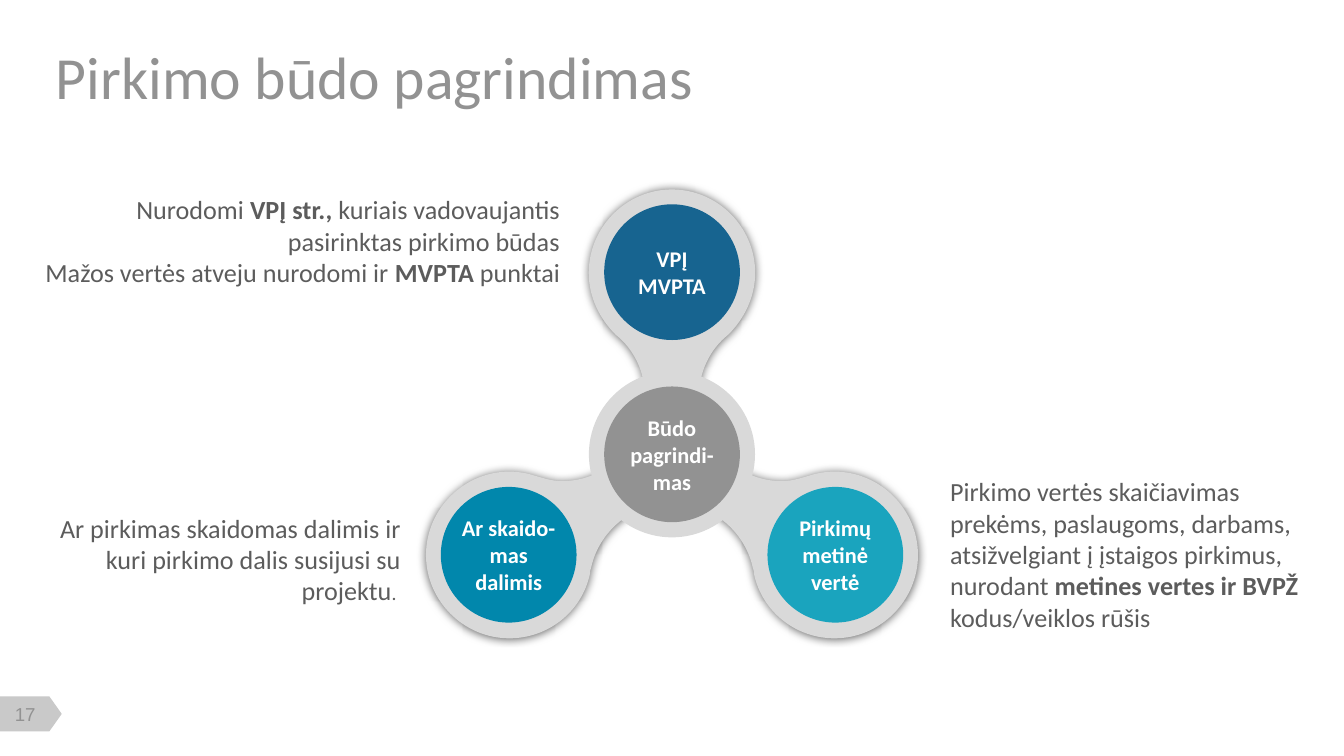
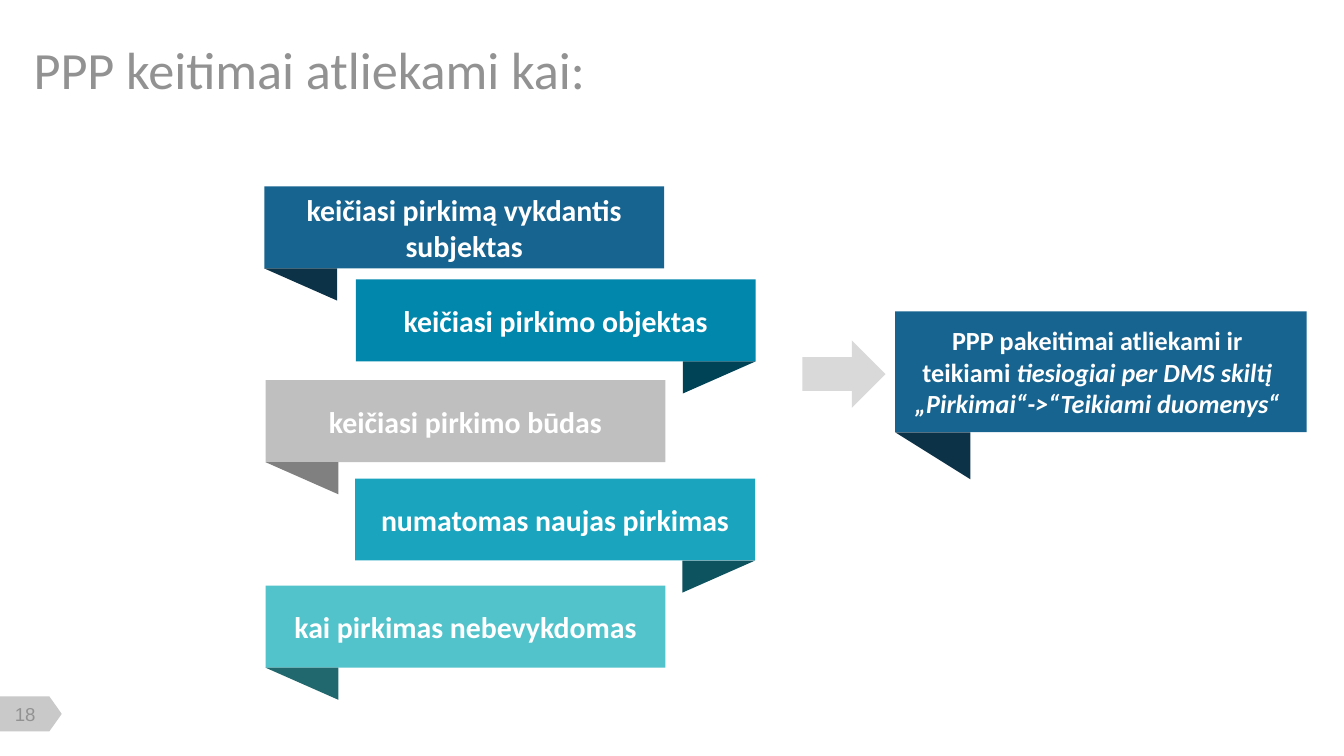
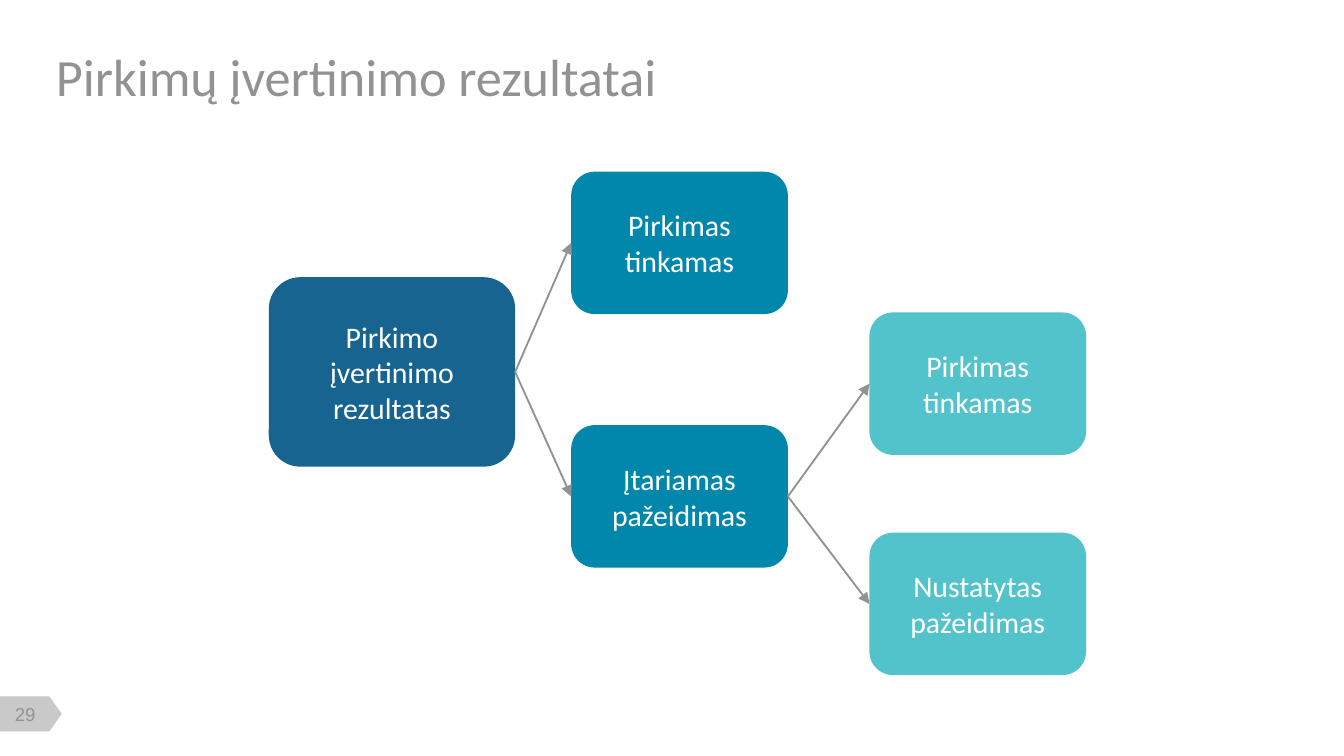
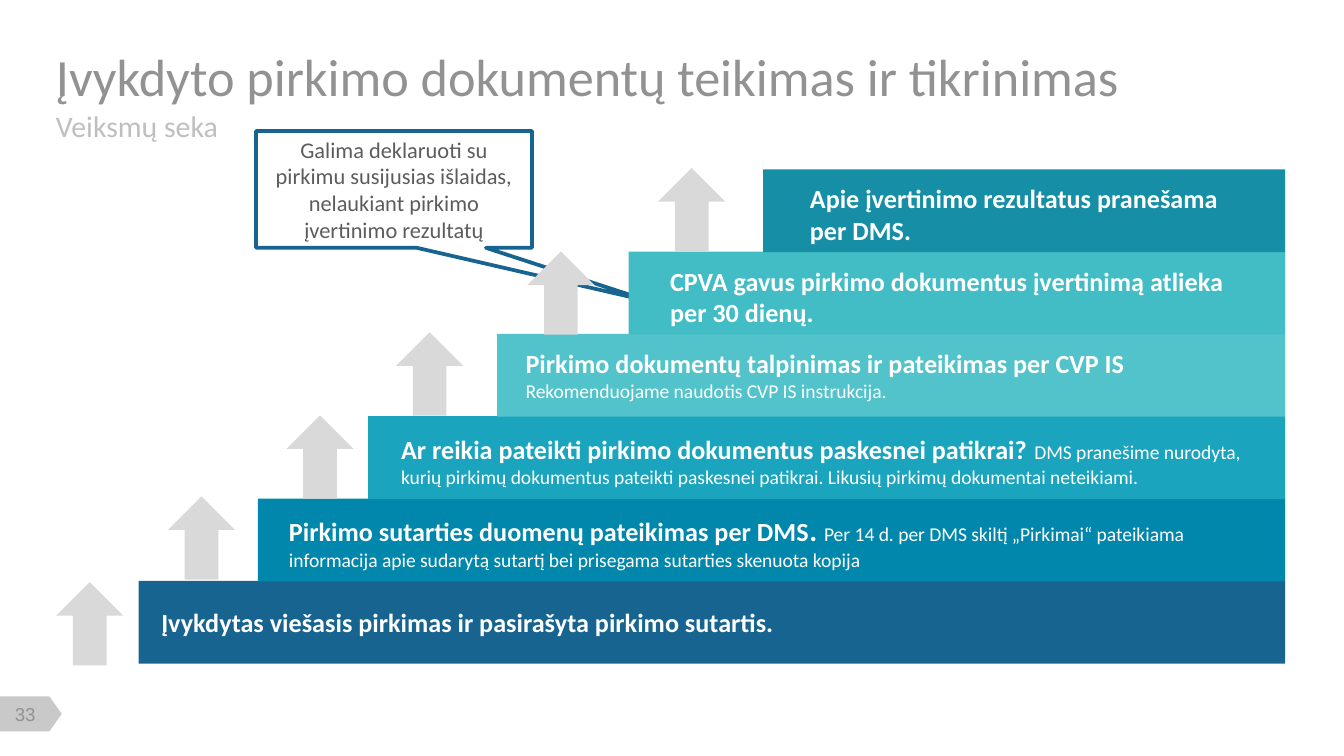
import pptx
import pptx.dml.color
import pptx.enum.shapes
import pptx.enum.text
import pptx.oxml.ns
import pptx.util

Pt = pptx.util.Pt
qn = pptx.oxml.ns.qn
SHAPE = pptx.enum.shapes.MSO_SHAPE
ALIGN = pptx.enum.text.PP_ALIGN
ANCHOR = pptx.enum.text.MSO_ANCHOR

COLORS = {
    "white": "FFFFFF", "text": "5C5C5C", "title": "929292", "subtitle": "BFBFBF",
    "tag": "C9C9C9", "light": "D9D9D9", "navy": "176490", "navy_dark": "0C3248",
    "blue": "0187AC", "blue_dark": "004356", "silver": "BFBFBF", "silver_dark": "808080",
    "teal": "1AA4BE", "teal_dark": "0D525F", "aqua": "52C3CB", "aqua_dark": "21686E",
    "mint": "42BDC6", "sea": "168EA6", "shadow": "000000",
}
BOLD = {"bold": True}
SMALL = {"size": Pt(10.5), "bold": False}
GAP = {"size": Pt(16)}
NO_INSETS, INSETS = (0, 0, 0, 0), (7.2, 3.6, 7.2, 3.6)
TITLE_BOX = (30, 26.6, 658.8, 28.1)

# Slide 17: a spinner of three discs round a hub
SPINNER_AXIS = 360
SPINNER_START = (0, 101.5)
# Bezier segments of one half: distance from the axis, height
SPINNER_HALF = [
    ((24.5, 101.5), (44.6, 121.7), (44.6, 146.2)),
    ((44.6, 159.1), (38.9, 170.6), (30.2, 179.3)),
    ((20.2, 187.2), (14.4, 199.4), (14.4, 213.1)),
    ((14.4, 237.6), (34.6, 257.8), (59, 257.8)),
    ((64.1, 257.8), (68.4, 256.3), (73.4, 254.9)),
    ((77.8, 253.4), (82.8, 252.7), (87.1, 252.7)),
    ((111.6, 252.7), (131.8, 272.9), (131.8, 297.4)),
    ((131.8, 321.8), (111.6, 342), (87.1, 342)),
    ((66.2, 342), (48.2, 327.6), (43.9, 307.4)),
    ((43.9, 306.7), (43.9, 305.3), (43.2, 303.8)),
    ((38.9, 284.4), (20.9, 269.3), (0, 269.3)),
]
DISC, HUB = 72.7, 89
HUB_CENTRE = (360, 243.4)
DISCS = [
    ((272.5, 297.2), "blue", ["Ar skaido-mas dalimis"]),
    ((447.5, 297.2), "teal", ["Pirkimų metinė vertė"]),
    ((360, 145.8), "navy", ["VPĮ", "MVPTA"]),
]
HUB_TEXT = ["Būdo pagrindi-mas"]
SPINNER_NOTES = [
    ((17.8, 103.7, 282.2, 67.7), ALIGN.RIGHT, [
        ["Nurodomi ", ("VPĮ str., ", BOLD), "kuriais vadovaujantis pasirinktas pirkimo būdas"],
        ["Mažos vertės atveju nurodomi ir ", ("MVPTA ", BOLD), "punktai"]]),
    ((18.2, 274.3, 196.6, 51.1), ALIGN.RIGHT, [
        ["Ar pirkimas skaidomas dalimis ir kuri pirkimo dalis susijusi su projektu",
         (". ", {"size": Pt(10.5)})]]),
    ((509, 254.8, 196.6, 85), ALIGN.LEFT, [
        ["Pirkimo vertės skaičiavimas prekėms, paslaugoms, darbams, atsižvelgiant "
         "į įstaigos pirkimus, nurodant ", ("metines vertes ir BVPŽ", BOLD),
         " kodus/veiklos rūšis"]]),
]

# Slide 18: ribbons folded left and right in turn
RIBBON_SIZE, RIBBON_FOLD = (214.2, 43.9), (39, 17.2)
RIBBONS = [
    (141.6, 99.9, "navy", "keičiasi pirkimą vykdantis subjektas"),
    (190.6, 149.7, "blue", "keičiasi pirkimo objektas"),
    (142.3, 203.7, "silver", "keičiasi pirkimo būdas"),
    (190.3, 256.4, "teal", "numatomas naujas pirkimas"),
    (142.3, 313.8, "aqua", "kai pirkimas nebevykdomas"),
]
OUTCOME_BOX, OUTCOME_FOLD = (479.6, 166.8, 220.4, 64.8), (40.3, 25.2)
OUTCOME_INSETS = (7.8, 3.6, 11.6, 3.6)
OUTCOME = [["PPP pakeitimai atliekami ir teikiami ",
            ("tiesiogiai per DMS skiltį „Pirkimai“->“Teikiami duomenys“", {"italic": True})]]

# Slide 29: decision tree
NODE_SIZE = (116.1, 76.3)
NODES = {
    "result": ((144, 148.5, 132, 101.5), "navy", "Pirkimo įvertinimo rezultatas"),
    "fit": ((306, 92, *NODE_SIZE), "blue", "Pirkimas tinkamas"),
    "suspected": ((306, 227.8, *NODE_SIZE), "blue", "Įtariamas pažeidimas"),
    "cleared": ((465.8, 167.4, *NODE_SIZE), "aqua", "Pirkimas tinkamas"),
    "confirmed": ((465.8, 285.4, *NODE_SIZE), "aqua", "Nustatytas pažeidimas"),
}
BRANCHES = [("result", "fit"), ("result", "suspected"),
            ("suspected", "cleared"), ("suspected", "confirmed")]

# Slide 33: staircase, from the bottom step up
STAIR_RIGHT, STAIR_BOTTOM, RISE, STEP_HEIGHT = 688.5, 311.2, 44.1, 44.4
ARROW_SIZE = (44.6, 36)
# step left, colour, arrow corner, text box, text
STEPS = [
    (74.3, "navy", (25.8, 316.1), (79.3, 321.1, 581.8, 24.5),
     ["Įvykdytas viešasis pirkimas ir pasirašyta pirkimo sutartis."]),
    (138.1, "blue", (85.7, 270.2), (147.7, 270.7, 510.5, 39.6),
     [["Pirkimo sutarties duomenų pateikimas per DMS", (". ", GAP),
       ("Per 14 d. per DMS skiltį „Pirkimai“ pateikiama informacija apie sudarytą "
        "sutartį bei prisegama sutarties skenuota kopija", SMALL)]]),
    (197.2, "teal", (149.2, 226.8), (207.8, 226.6, 478.1, 39.6),
     [["Ar reikia pateikti pirkimo dokumentus paskesnei patikrai?", (" ", GAP),
       ("DMS pranešime nurodyta, kurių pirkimų dokumentus pateikti paskesnei "
        "patikrai. Likusių pirkimų dokumentai neteikiami.", SMALL)]]),
    (266.3, "aqua", (207.9, 182.3), (274.5, 182.7, 401, 36.7),
     ["Pirkimo dokumentų talpinimas ir pateikimas per CVP IS",
      [("Rekomenduojame naudotis CVP IS instrukcija.", SMALL)]]),
    (336.8, "mint", (278.2, 139), (351.9, 138.4, 321.1, 54),
     ["CPVA gavus pirkimo dokumentus įvertinimą atlieka per 30 dienų."]),
    (408.8, "sea", (348.3, 94.3), (426.8, 94.3, 246.2, 54),
     ["Apie įvertinimo rezultatus pranešama per DMS."]),
]
CALLOUT = ["Galima deklaruoti su pirkimu susijusias išlaidas, "
           "nelaukiant pirkimo įvertinimo rezultatų"]


def rgb(name):
    return pptx.dml.color.RGBColor.from_string(COLORS[name])


def write(sp, paras, size, color="white", bold=False, align=ALIGN.CENTER,
          anchor=ANCHOR.MIDDLE, insets=INSETS, font="Calibri"):
    """Fill a shape; a paragraph is a string or a list of strings and (text, font) runs."""
    tf = sp.text_frame
    tf.word_wrap = True
    tf.auto_size = pptx.enum.text.MSO_AUTO_SIZE.NONE
    tf.vertical_anchor = anchor
    tf.margin_left, tf.margin_top, tf.margin_right, tf.margin_bottom = map(Pt, insets)
    for i, runs in enumerate(paras):
        p = tf.paragraphs[0] if i == 0 else tf.add_paragraph()
        p.alignment = align
        p.font.name, p.font.size, p.font.bold = font, Pt(size), bold
        p.font.color.rgb = rgb(color)
        for run in [runs] if isinstance(runs, str) else runs:
            text, style = (run, {}) if isinstance(run, str) else run
            r = p.add_run()
            r.text = text
            for key, value in style.items():
                setattr(r.font, key, value)


def place(sp, box):
    sp.left, sp.top, sp.width, sp.height = map(Pt, box)


def paint(sp, color):
    sp.shadow.inherit = False
    sp.fill.solid()
    sp.fill.fore_color.rgb = rgb(color)
    sp.line.fill.background()


def add_shape(s, kind, box, color, rotation=0):
    sp = s.shapes.add_shape(kind, *map(Pt, box))
    sp.rotation = rotation
    paint(sp, color)
    return sp


def add_text(s, box, paras, size, **style):
    write(s.shapes.add_textbox(*map(Pt, box)), paras, size, **style)


def add_disc(s, centre, diameter, color, paras=()):
    x, y = centre
    box = (x - diameter / 2, y - diameter / 2, diameter, diameter)
    sp = add_shape(s, SHAPE.OVAL, box, color)
    write(sp, paras, 12, bold=True, insets=NO_INSETS)


def add_slide(prs, number, title, size=28, box=TITLE_BOX, layout=5):
    s = prs.slides.add_slide(prs.slide_layouts[layout])
    place(s.shapes.title, box)
    write(s.shapes.title, [title], size, "title", align=ALIGN.LEFT, insets=(0, 3.6, 7.2, 3.6))
    add_shape(s, SHAPE.FLOWCHART_OFFPAGE_CONNECTOR, (7.2, 365.9, 18.7, 33.1), "tag", 270)
    add_text(s, (1.6, 376.6, 23.8, 12.2), [str(number)], 10, color="title",
             insets=NO_INSETS, font="Arial")
    return s


def add_child(parent, tag, **attributes):
    child = parent.makeelement(qn(tag), attributes)
    parent.append(child)
    return child


def add_spinner(s):
    # The second half runs back up the mirrored segments
    ends = [SPINNER_START] + [segment[2] for segment in SPINNER_HALF]
    back = [(b, a, end) for (a, b, _), end in zip(SPINNER_HALF, ends)][::-1]
    curves = [[(Pt(SPINNER_AXIS + side * dx), Pt(y)) for dx, y in segment]
              for side, half in ((-1, SPINNER_HALF), (1, back)) for segment in half]
    builder = s.shapes.build_freeform(Pt(SPINNER_AXIS), Pt(SPINNER_START[1]))
    builder.add_line_segments([curve[2] for curve in curves], close=True)
    sp = builder.convert_to_shape()
    paint(sp, "light")
    for line, curve in zip(list(sp.element.iter(qn("a:lnTo"))), curves):
        bezier = line.makeelement(qn("a:cubicBezTo"), {})
        for x, y in curve:
            add_child(bezier, "a:pt", x=str(x - sp.left), y=str(y - sp.top))
        line.getparent().replace(line, bezier)
    effects = sp.element.spPr.find(qn("a:effectLst"))
    shadow = add_child(effects, "a:outerShdw", blurRad=str(Pt(5)), dist="0")
    add_child(add_child(shadow, "a:srgbClr", val=COLORS["shadow"]), "a:alpha", val="60000")


def add_ribbon(s, box, fold, color, paras, size, right=False, insets=INSETS):
    """Draw a band with a dark fold hanging from its left or right end."""
    x, y, w, h = box
    long, short = fold
    write(add_shape(s, SHAPE.RECTANGLE, box, color), paras, size, bold=True, insets=insets)
    cx = x + w - long / 2 if right else x + long / 2
    cy = y + h + short / 2
    sp = add_shape(s, SHAPE.RIGHT_TRIANGLE, (cx - short / 2, cy - long / 2, short, long),
                   color + "_dark", 90 if right else 270)
    if not right:
        sp.element.spPr.find(qn("a:xfrm")).set("flipH", "1")


def add_branch(s, start, end):
    c = s.shapes.add_connector(pptx.enum.shapes.MSO_CONNECTOR.STRAIGHT, 0, 0, 0, 0)
    c.begin_connect(start, 3)
    c.end_connect(end, 1)
    c.line.color.rgb = rgb("title")
    c.line.width = Pt(1)
    spPr = c.element.spPr
    add_child(spPr.find(qn("a:ln")), "a:tailEnd", type="triangle")
    add_child(spPr, "a:effectLst")


def build_grounds(prs):
    s = add_slide(prs, 17, "Pirkimo būdo pagrindimas", 32)
    add_spinner(s)
    for centre, color, paras in DISCS:
        add_disc(s, centre, DISC, color, paras)
    for box, align, paras in SPINNER_NOTES:
        add_text(s, box, paras, 14, color="text", align=align,
                 anchor=ANCHOR.TOP, insets=NO_INSETS)
    add_disc(s, HUB_CENTRE, HUB, "light")
    add_disc(s, HUB_CENTRE, DISC, "title", HUB_TEXT)


def build_changes(prs):
    s = add_slide(prs, 18, "PPP keitimai atliekami kai:", box=(18, 22.7, 306, 28.1))
    for i, (x, y, color, text) in enumerate(RIBBONS):
        add_ribbon(s, (x, y, *RIBBON_SIZE), RIBBON_FOLD, color, [text], 16, right=i % 2 == 1)
    add_shape(s, SHAPE.RIGHT_ARROW, (429.8, 182.4, *ARROW_SIZE), "light")
    add_ribbon(s, OUTCOME_BOX, OUTCOME_FOLD, "navy", OUTCOME, 14, insets=OUTCOME_INSETS)


def build_results(prs):
    s = add_slide(prs, 29, "Pirkimų įvertinimo rezultatai")
    nodes = {}
    for name, (box, color, text) in NODES.items():
        nodes[name] = add_shape(s, SHAPE.ROUNDED_RECTANGLE, box, color)
        write(nodes[name], [text], 16)
    for start, end in BRANCHES:
        add_branch(s, nodes[start], nodes[end])


def build_sequence(prs):
    s = add_slide(prs, 33, "Įvykdyto pirkimo dokumentų teikimas ir tikrinimas", layout=1)
    body = s.placeholders[1]
    place(body, (30, 60.5, 658.8, 13.7))
    p = body.text_frame.paragraphs[0]
    pPr = p._p.get_or_add_pPr()
    pPr.set("marL", "0")
    pPr.set("indent", "0")
    add_child(pPr, "a:buNone")
    write(body, ["Veiksmų seka"], 16, "subtitle", align=ALIGN.LEFT, insets=NO_INSETS)
    p.space_before = Pt(0)

    callout = add_shape(s, SHAPE.RECTANGULAR_CALLOUT, (137.2, 70.2, 147.8, 62.6), "white")
    callout.adjustments[0], callout.adjustments[1] = 0.93, 0.96
    callout.line.color.rgb = rgb("navy")
    callout.line.width = Pt(2)
    write(callout, CALLOUT, 12, "text")

    for i, (x, color, arrow, _, _) in enumerate(STEPS):
        y = STAIR_BOTTOM - i * RISE
        add_shape(s, SHAPE.RECTANGLE, (x, y, STAIR_RIGHT - x, STEP_HEIGHT), color)
        add_shape(s, SHAPE.RIGHT_ARROW, (*arrow, *ARROW_SIZE), "light", 270)
    for _, _, _, box, paras in STEPS:
        add_text(s, box, paras, 14, bold=True, align=ALIGN.LEFT, anchor=ANCHOR.TOP)


def main():
    prs = pptx.Presentation()
    prs.slide_width, prs.slide_height = Pt(720), Pt(405)
    build_grounds(prs)
    build_changes(prs)
    build_results(prs)
    build_sequence(prs)
    prs.save("out.pptx")


if __name__ == "__main__":
    main()
